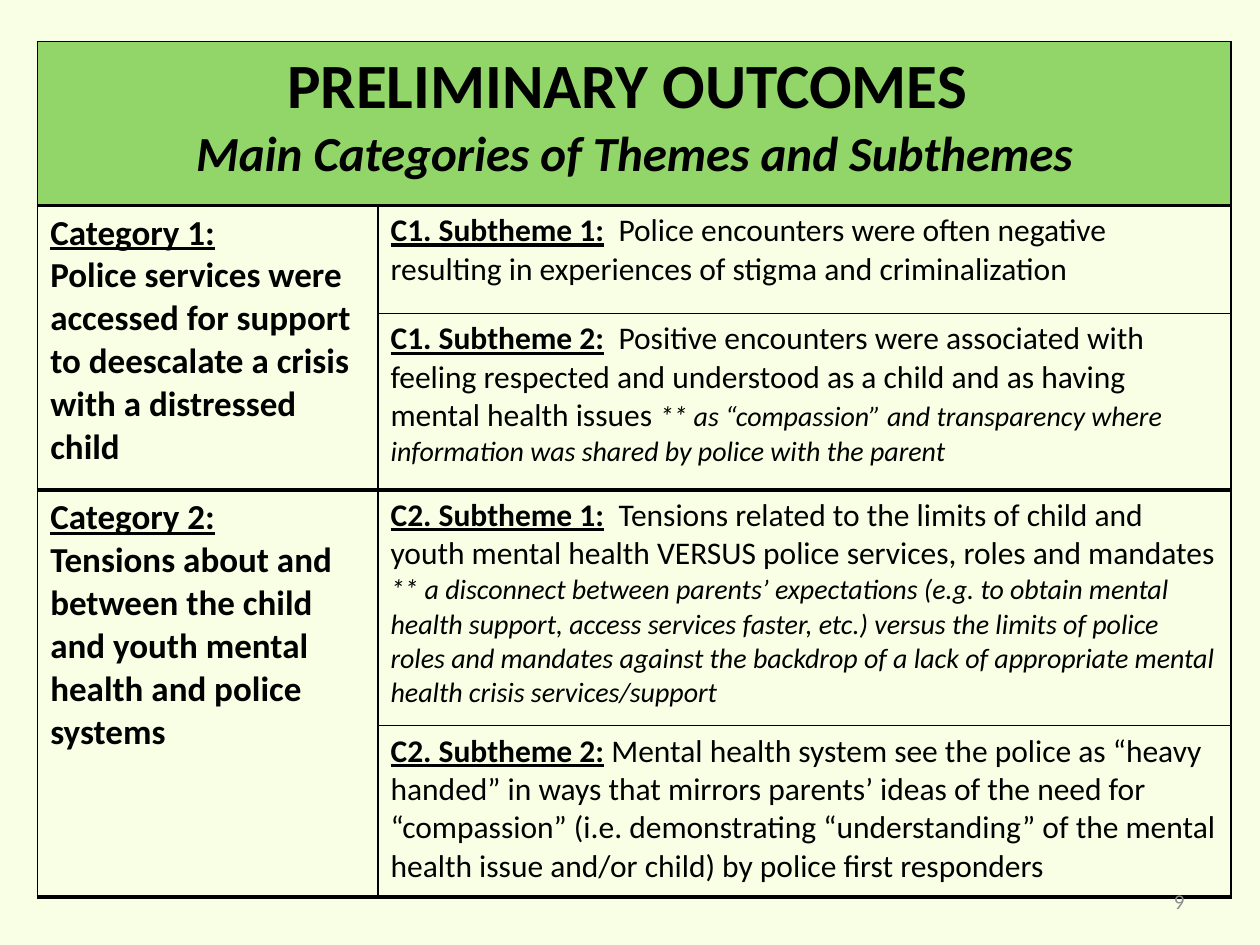
from lxml import etree
from pptx import Presentation
from pptx import util as u
from pptx.dml.color import RGBColor
from pptx.enum import text
from pptx.oxml.ns import qn

COLOURS = {
    "page": "F8FFE5",
    "heading": "92D66A",
    "ink": "000000",
    "number": "8C8C8C",
}
COLUMN_WIDTHS = [6.86, 17.2]
ROW_HEIGHTS = [3.3, 2.18, 3.56, 4.75, 3.45]
THIN, THICK = 1, 2.25

TITLE = {"size": 36, "bold": True}
SUBTITLE = {"size": 28, "bold": True, "italic": True}
CATEGORY = {"size": 20, "bold": True}
CATEGORY_LABEL = {**CATEGORY, "underline": True}
BODY = {"size": 18}
SUBTHEME_LABEL = {**BODY, "bold": True, "underline": True}
ASIDE = {"size": 16, "italic": True}

CATEGORIES = [
    ("Category 1:",
     "Police services were accessed for support to deescalate a crisis with a distressed child"),
    ("Category 2:",
     "Tensions about and between the child and youth mental health and police systems"),
]
SUBTHEMES = [
    [("C1. Subtheme 1:", SUBTHEME_LABEL),
     ("  Police encounters were often negative resulting in experiences of stigma "
      "and criminalization", BODY)],
    [("C1. Subtheme 2:", SUBTHEME_LABEL),
     ("  Positive encounters were associated with feeling respected and understood "
      "as a child and as having mental health issues ", BODY),
     ("** as “compassion” and transparency where information was shared by police "
      "with the parent", ASIDE)],
    [("C2. Subtheme 1:", SUBTHEME_LABEL),
     ("  Tensions related to the limits of child and youth mental health VERSUS "
      "police services, roles and mandates ", BODY),
     ("** a disconnect between parents’ expectations (e.g. to obtain mental health "
      "support, access services faster, etc.) versus the limits of police roles and "
      "mandates against the backdrop of a lack of appropriate mental health crisis "
      "services/support", ASIDE)],
    [("C2. Subtheme 2:", SUBTHEME_LABEL),
     (" Mental health system see the police as “heavy handed” in ways that mirrors "
      "parents’ ideas of the need for “compassion” (i.e. demonstrating "
      "“understanding” of the mental health issue and/or child) by police first "
      "responders", BODY)],
]


class Painter:
    font = "Calibri"

    def __init__(self, page):
        self.page = page
        fill = page.background.fill
        fill.solid()
        fill.fore_color.rgb = self.colour("page")

    def colour(self, name):
        return RGBColor.from_string(COLOURS[name])

    def fill_text(self, frame, paragraphs, align=text.PP_ALIGN.LEFT, colour="ink"):
        for index, spans in enumerate(paragraphs):
            para = frame.add_paragraph() if index else frame.paragraphs[0]
            para.alignment = align
            for words, style in spans:
                span = para.add_run()
                span.text = words
                font = span.font
                font.name = self.font
                font.size = u.Pt(style["size"])
                font.bold = style.get("bold", False)
                font.italic = style.get("italic", False)
                font.underline = style.get("underline", False)
                font.color.rgb = self.colour(colour)

    def border(self, cell, widths):
        properties = cell._tc.get_or_add_tcPr()
        for index, (side, points) in enumerate(widths.items()):
            line = etree.Element(qn(f"a:ln{side}"), w=str(u.Pt(points)))
            fill = etree.SubElement(line, qn("a:solidFill"))
            etree.SubElement(fill, qn("a:srgbClr"), val=COLOURS["ink"])
            properties.insert(index, line)

    def table(self, left, top, widths, heights):
        frame = self.page.shapes.add_table(
            len(heights), len(widths), u.Cm(left), u.Cm(top),
            u.Cm(sum(widths)), u.Cm(sum(heights)))
        table = frame.table
        table.first_row = table.horz_banding = False
        for column, width in zip(table.columns, widths):
            column.width = u.Cm(width)
        for row, height in zip(table.rows, heights):
            row.height = u.Cm(height)
        return table

    def text_box(self, left, top, width, height, words, size, colour, align):
        box = self.page.shapes.add_textbox(
            u.Cm(left), u.Cm(top), u.Cm(width), u.Cm(height))
        frame = box.text_frame
        frame.word_wrap = True
        frame.vertical_anchor = text.MSO_ANCHOR.MIDDLE
        self.fill_text(frame, [[(words, {"size": size})]], align, colour)


def draw_outcomes(painter):
    table = painter.table(0.76, 0.84, COLUMN_WIDTHS, ROW_HEIGHTS)
    table.cell(0, 0).merge(table.cell(0, 1))
    for first in (1, 3):
        table.cell(first, 0).merge(table.cell(first + 1, 0))

    for row in range(len(ROW_HEIGHTS)):
        for column in range(len(COLUMN_WIDTHS)):
            cell = table.cell(row, column)
            if row == 0:
                cell.fill.solid()
                cell.fill.fore_color.rgb = painter.colour("heading")
            else:
                cell.fill.background()
            widths = {"L": THIN, "R": THIN}
            if row == 0 or not (column == 0 and cell.is_spanned):
                widths["T"] = THICK if row in (1, 3) else THIN
            widths["B"] = THICK if column == 0 or row in (0, 2, 4) else THIN
            painter.border(cell, widths)

    painter.fill_text(
        table.cell(0, 0).text_frame,
        [[("PRELIMINARY OUTCOMES ", TITLE)],
         [("Main Categories of Themes and Subthemes", SUBTITLE)]],
        text.PP_ALIGN.CENTER)
    for index, (label, words) in enumerate(CATEGORIES):
        painter.fill_text(table.cell(1 + 2 * index, 0).text_frame,
                          [[(label, CATEGORY_LABEL)], [(words, CATEGORY)]])
    for row, spans in enumerate(SUBTHEMES, 1):
        painter.fill_text(table.cell(row, 1).text_frame, [spans])


def main():
    deck = Presentation()
    deck.slide_width, deck.slide_height = u.Cm(25.4), u.Cm(19.05)
    painter = Painter(deck.slides.add_slide(deck.slide_layouts[6]))
    draw_outcomes(painter)
    painter.text_box(18.21, 17.65, 5.92, 1.02, "9", 12, "number",
                     text.PP_ALIGN.RIGHT)
    deck.save("out.pptx")


if __name__ == "__main__":
    main()
